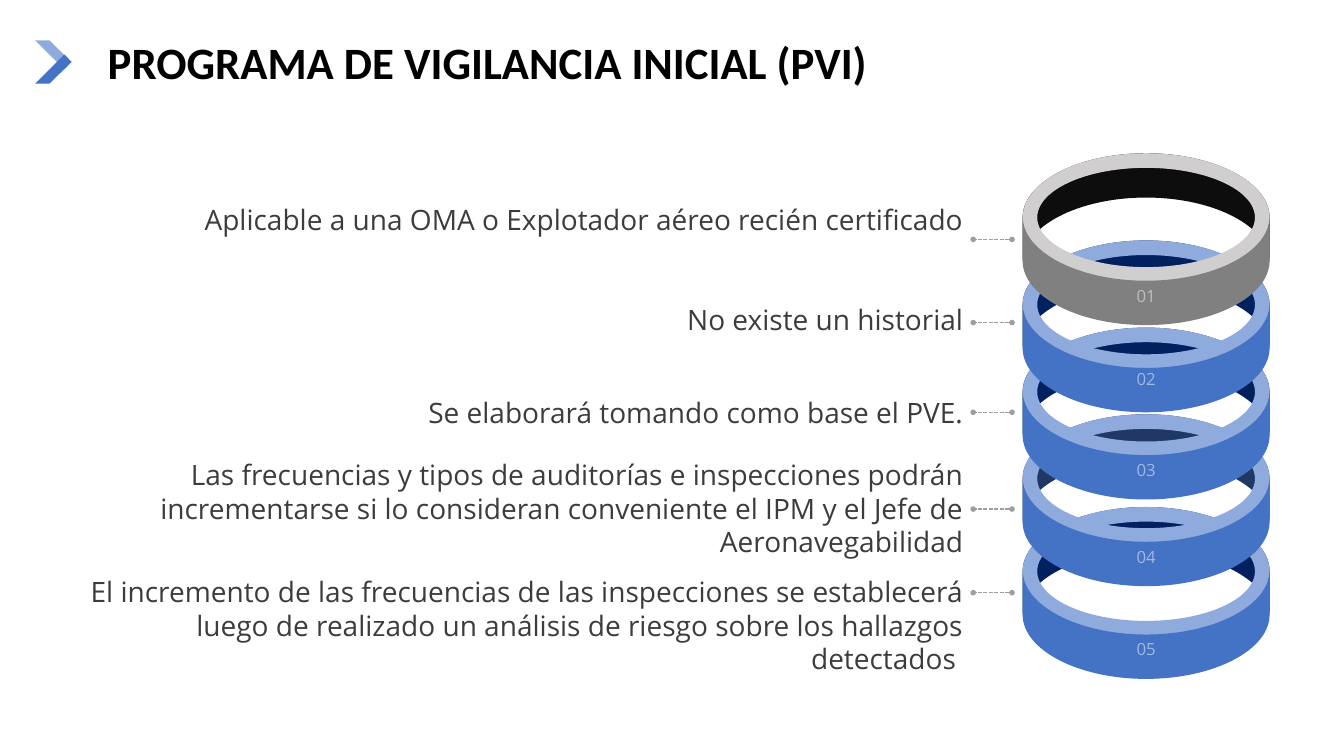
"""Build the slide on the initial surveillance programme with its stack of five rings."""
from dataclasses import dataclass
from typing import Optional

from lxml import etree
from pptx import Presentation
from pptx.dml.color import RGBColor
from pptx.enum.dml import MSO_LINE
from pptx.enum.shapes import MSO_CONNECTOR, MSO_SHAPE
from pptx.enum.text import MSO_ANCHOR, PP_ALIGN
from pptx.oxml.ns import qn
from pptx.shapes.autoshape import Shape
from pptx.slide import Slide
from pptx.text.text import TextFrame
from pptx.util import Inches, Pt

STRAIGHT = MSO_CONNECTOR.STRAIGHT
DONUT = MSO_SHAPE.DONUT
SYSTEM_DASH = MSO_LINE.SQUARE_DOT
MIDDLE, TOP = MSO_ANCHOR.MIDDLE, MSO_ANCHOR.TOP
LEFT, CENTER, RIGHT = PP_ALIGN.LEFT, PP_ALIGN.CENTER, PP_ALIGN.RIGHT
RIGHT_SIDE = 3

CELL = Inches(0.1)
COLUMNS, ROWS = 133.33, 75
Point = tuple[float, float]


@dataclass(frozen=True)
class Theme:
    heading_font: str = "Calibri"
    body_font: str = "Open Sans"
    title_size: int = 32
    body_size: int = 20
    number_size: int = 12
    title: str = "000000"
    body: str = "3C3C3C"
    number: str = "FFFFFF"
    number_alpha: int = 50
    lead: str = "9E9E9E"
    light: str = "8FAADC"
    blue: str = "4472C4"
    navy: str = "002060"
    slate: str = "203864"
    black: str = "0D0D0D"
    silver: str = "D0CECE"
    gray: str = "808080"
    title_spacing: float = 0.9


THEME = Theme()


@dataclass(frozen=True)
class Ring:
    number: str
    row: float
    inside: str = THEME.navy
    rim: str = THEME.light
    front: str = THEME.blue
    number_drop: float = 4.9


@dataclass(frozen=True)
class Statement:
    text: str
    row: float
    height: float
    lead_row: Optional[float] = None


RING_LEFT, RING_WIDTH, RING_DEPTH = 101.45, 24.5, 12.75
RIM_THICKNESS, WALL_HEIGHT, FRONT_RISE = 1.45, 4.4, 0.1
ARC_PULL = 0.55
WALL_CURVES = (0, 3, 7, 10)
TEXT_LEFT, TEXT_WIDTH, LEAD_END = 7.9, 88.65, 100.4

RINGS = (
    Ring("01", 15.2, THEME.black, THEME.silver, THEME.gray),
    Ring("02", 23.85, number_drop=4.1),
    Ring("03", 32.5),
    Ring("04", 41.1, THEME.slate),
    Ring("05", 50.3),
)
STATEMENTS = (
    Statement("Aplicable a una OMA o Explotador aéreo recién certificado", 19.6, 8.3),
    Statement("No existe un historial", 29.5, 5),
    Statement("Se elaborará tomando como base el PVE.", 38.7, 4.4),
    Statement("Las frecuencias y tipos de auditorías e inspecciones podrán incrementarse "
              "si lo consideran conveniente el IPM y el Jefe de Aeronavegabilidad",
              44.9, 7.5, 50.5),
    Statement("El incremento de las frecuencias de las inspecciones se establecerá luego "
              "de realizado un análisis de riesgo sobre los hallazgos detectados ",
              56.5, 11.5, 58.8),
)
CHEVRON = (
    (((3.5, 4), (6.4, 6.9), (7.1, 6.15), (4.9, 4)), THEME.light),
    (((3.5, 8.3), (6.4, 5.4), (7.1, 6.15), (4.9, 8.3)), THEME.blue),
)


def cells(count: float) -> int:
    return round(count * CELL)


def paint(shape: Shape, color: str) -> None:
    shape.shadow.inherit = False
    shape.fill.solid()
    shape.fill.fore_color.rgb = RGBColor.from_string(color)
    shape.line.fill.background()


def add_outline(slide: Slide, points: list[Point], color: str,
                curves: tuple[int, ...] = ()) -> Shape:
    corners = [(cells(column), cells(row)) for column, row in points]
    builder = slide.shapes.build_freeform(*corners[0])
    builder.add_line_segments(corners[1:], close=True)
    shape = builder.convert_to_shape()
    paint(shape, color)
    segments = list(shape._element.iter(qn("a:lnTo")))
    for first in curves:
        curve = etree.Element(qn("a:cubicBezTo"))
        segments[first].addprevious(curve)
        for segment in segments[first:first + 3]:
            curve.append(segment[0])
            segment.getparent().remove(segment)
    return shape


def write(frame: TextFrame, text: str, font_name: str, size: int, color: str,
          align: PP_ALIGN, anchor: MSO_ANCHOR, bold: bool = False,
          spacing: float = 1.0) -> None:
    frame.word_wrap = True
    frame.vertical_anchor = anchor
    paragraph = frame.paragraphs[0]
    paragraph.alignment = align
    paragraph.line_spacing = spacing
    run = paragraph.add_run()
    run.text = text
    run.font.name = font_name
    run.font.size = Pt(size)
    run.font.bold = bold
    run.font.color.rgb = RGBColor.from_string(color)


def half_ellipse(row: float, bulge: float) -> list[Point]:
    radius = RING_WIDTH / 2
    center = RING_LEFT + radius
    shares = ((1, 0), (1, ARC_PULL), (ARC_PULL, 1), (0, 1),
              (-ARC_PULL, 1), (-1, ARC_PULL), (-1, 0))
    return [(center + radius * across, row + bulge * down) for across, down in shares]


def add_wall(slide: Slide, row: float, bulge: float, color: str) -> Shape:
    upper = half_ellipse(row, bulge)
    lower = half_ellipse(row + WALL_HEIGHT, bulge)
    return add_outline(slide, upper + lower[::-1], color, WALL_CURVES)


def add_ring(slide: Slide, ring: Ring) -> None:
    radius = RING_DEPTH / 2
    center = ring.row + radius
    add_wall(slide, center, -radius, ring.inside)
    rim = slide.shapes.add_shape(DONUT, cells(RING_LEFT), cells(ring.row),
                                 cells(RING_WIDTH), cells(RING_DEPTH))
    rim.adjustments[0] = RIM_THICKNESS / RING_DEPTH
    paint(rim, ring.rim)
    front = add_wall(slide, center - FRONT_RISE, radius, ring.front)
    frame = front.text_frame
    frame.margin_left = frame.margin_right = frame.margin_bottom = 0
    frame.margin_top = cells(ring.number_drop)
    write(frame, ring.number, THEME.body_font, THEME.number_size, THEME.number,
          CENTER, MIDDLE)
    for color in frame.paragraphs[0]._p.iter(qn("a:srgbClr")):
        etree.SubElement(color, qn("a:alpha"), val=str(THEME.number_alpha * 1000))


def add_statement(slide: Slide, statement: Statement) -> None:
    box = slide.shapes.add_textbox(cells(TEXT_LEFT), cells(statement.row),
                                   cells(TEXT_WIDTH), cells(statement.height))
    write(box.text_frame, statement.text, THEME.body_font, THEME.body_size, THEME.body,
          RIGHT, TOP)
    middle = statement.row + statement.height / 2
    row = cells(middle if statement.lead_row is None else statement.lead_row)
    lead = slide.shapes.add_connector(STRAIGHT, cells(LEAD_END), row,
                                      cells(TEXT_LEFT + TEXT_WIDTH), row)
    if statement.lead_row is None:
        lead.end_connect(box, RIGHT_SIDE)
    lead.line.color.rgb = RGBColor.from_string(THEME.lead)
    lead.line.width = Pt(1)
    lead.line.dash_style = SYSTEM_DASH
    line = lead.line._get_or_add_ln()
    for end in ("a:headEnd", "a:tailEnd"):
        etree.SubElement(line, qn(end), type="oval", w="sm", len="sm")
    etree.SubElement(lead._element.spPr, qn("a:effectLst"))


def main() -> None:
    presentation = Presentation()
    presentation.slide_width = cells(COLUMNS)
    presentation.slide_height = cells(ROWS)
    slide = presentation.slides.add_slide(presentation.slide_layouts[6])
    for points, color in CHEVRON:
        add_outline(slide, list(points), color)
    title = slide.shapes.add_textbox(cells(9.7), cells(0.65), cells(115), cells(11.6))
    write(title.text_frame, "PROGRAMA DE VIGILANCIA INICIAL (PVI)", THEME.heading_font,
          THEME.title_size, THEME.title, LEFT, MIDDLE, True, THEME.title_spacing)
    for ring in reversed(RINGS):
        add_ring(slide, ring)
    for statement in STATEMENTS:
        add_statement(slide, statement)
    presentation.save("out.pptx")


if __name__ == "__main__":
    main()
